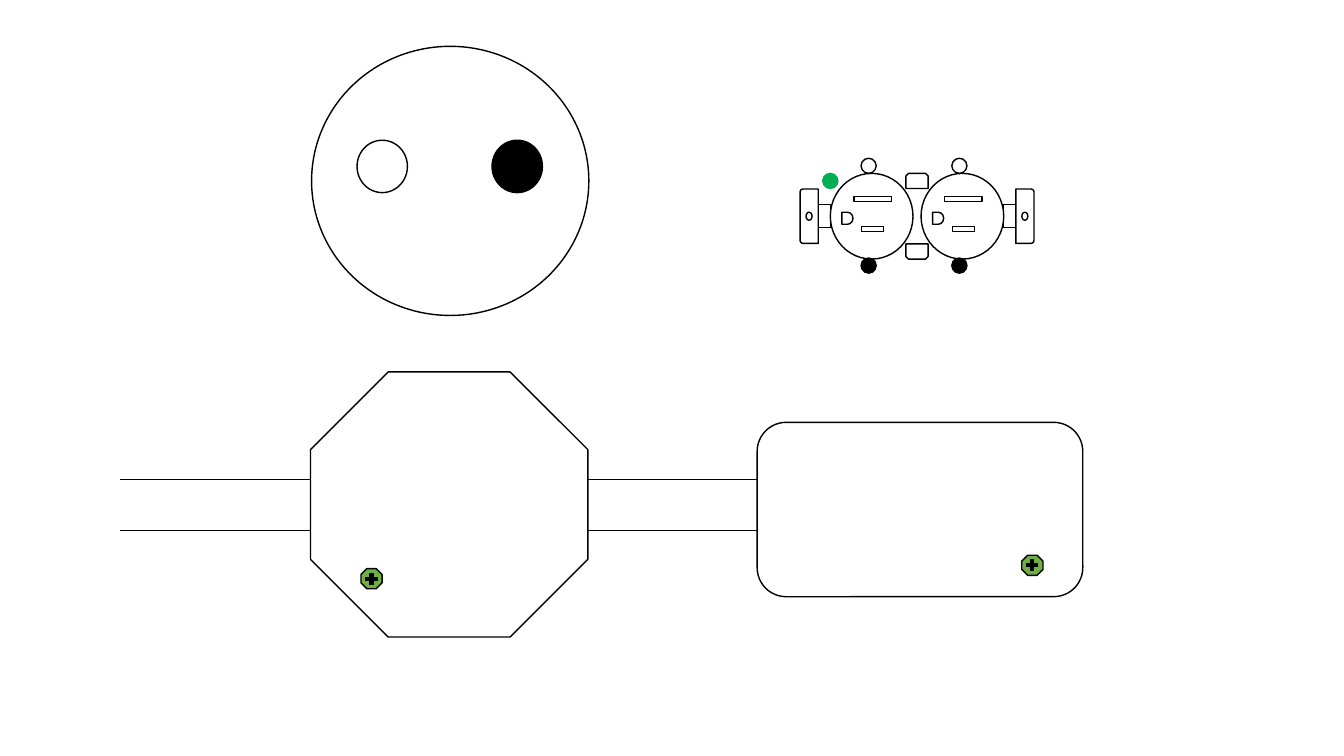
from collections import namedtuple

from lxml.etree import SubElement
from pptx import Presentation
from pptx.dml.color import RGBColor
from pptx.enum.shapes import MSO_CONNECTOR, MSO_SHAPE as Shape
from pptx.oxml.ns import qn
from pptx.util import Inches, Pt

BLACK = RGBColor(0, 0, 0)
WHITE = RGBColor(255, 255, 255)
GROUND_GREEN = RGBColor(0x70, 0xAD, 0x47)
SCREW_GREEN = RGBColor(0x00, 0xB0, 0x50)

Box = namedtuple("Box", "left top width height")


def at_share(box, across, down):
    return box.left + across * box.width, box.top + down * box.height


def draw(group, kind, center, size, fill=None, line=BLACK, turn=0):
    width, height = size
    shape = group.shapes.add_shape(
        kind,
        Inches(center[0] - width / 2),
        Inches(center[1] - height / 2),
        Inches(width),
        Inches(height),
    )
    shape.shadow.inherit = False
    shape.rotation = turn
    if fill is None:
        shape.fill.background()
    else:
        shape.fill.solid()
        shape.fill.fore_color.rgb = fill
    shape.line.color.rgb = line
    shape.line.width = Pt(1)


def draw_line(group, start, end, weight):
    line = group.shapes.add_connector(
        MSO_CONNECTOR.STRAIGHT, *(Inches(value) for value in (*start, *end))
    )
    line.line.color.rgb = BLACK
    line.line.width = Pt(weight)
    SubElement(line._element.spPr, qn("a:effectLst"))


def add_lampholder(page, box):
    group = page.shapes.add_group_shape()
    draw(group, Shape.OVAL, at_share(box, 0.5, 0.5), (box.width, box.height))
    for across, fill in ((0.255, None), (0.742, BLACK)):
        draw(group, Shape.OVAL, at_share(box, across, 0.446), (0.5, 0.52), fill)


def add_ground_screw(group, center):
    x, y = center
    arm = 0.06
    draw(group, Shape.OCTAGON, center, (0.21, 0.2), GROUND_GREEN)
    draw_line(group, (x, y - arm), (x, y + arm), 3)
    draw_line(group, (x - arm, y), (x + arm, y), 3)


def add_wiring_box(page, box, kind, fill, screw, conduit):
    group = page.shapes.add_group_shape()
    draw(group, kind, at_share(box, 0.5, 0.5), (box.width, box.height), fill)
    for y in (conduit.top, conduit.top + conduit.height):
        draw_line(group, (conduit.left, y), (conduit.left + conduit.width, y), 0.5)
    add_ground_screw(group, at_share(box, *screw))


def add_receptacle(group, center):
    x, y = center
    draw(group, Shape.OVAL, center, (0.82, 0.85))
    draw(group, Shape.RECTANGLE, (x + 0.01, y - 0.17), (0.37, 0.05))
    draw(group, Shape.RECTANGLE, (x + 0.01, y + 0.13), (0.22, 0.05))
    draw(group, Shape.FLOWCHART_DELAY, (x - 0.24, y + 0.02), (0.11, 0.12))
    for offset, fill in ((-0.5, None), (0.49, BLACK)):
        draw(group, Shape.OVAL, (x - 0.03, y + offset), (0.15, 0.15), fill)


def add_mounting_ear(group, center, side):
    x, y = center
    draw(group, Shape.ROUND_2_SAME_RECTANGLE, (x + side * 1.07, y), (0.54, 0.18), turn=side * 90 % 360)
    draw(group, Shape.RECTANGLE, (x + side * 0.92, y), (0.12, 0.23))
    draw(group, Shape.OVAL, (x + side * 1.07, y), (0.06, 0.08))


def add_duplex_outlet(page, box):
    group = page.shapes.add_group_shape()
    x, y = center = at_share(box, 0.5, 0.5)
    for side in (-1, 1):
        add_receptacle(group, (x + side * 0.45, y))
        add_mounting_ear(group, center, side)
    for side, turn in ((-1, 0), (1, 180)):
        draw(group, Shape.SNIP_2_SAME_RECTANGLE, (x, y + side * 0.35), (0.22, 0.15), turn=turn)
    draw(group, Shape.OVAL, (x - 0.86, y - 0.35), (0.15, 0.15), SCREW_GREEN, SCREW_GREEN)


def main():
    deck = Presentation()
    deck.slide_width = Inches(13.33)
    deck.slide_height = Inches(7.5)
    page = deck.slides.add_slide(deck.slide_layouts[6])

    add_lampholder(page, Box(3.09, 0.46, 2.75, 2.67))
    add_wiring_box(
        page, Box(3.08, 3.69, 2.75, 2.63), Shape.OCTAGON, WHITE,
        screw=(0.22, 0.78), conduit=Box(1.19, 4.76, 1.89, 0.5),
    )
    add_wiring_box(
        page, Box(7.51, 4.19, 3.23, 1.73), Shape.ROUNDED_RECTANGLE, None,
        screw=(0.845, 0.82), conduit=Box(5.83, 4.76, 1.68, 0.5),
    )
    add_duplex_outlet(page, Box(7.94, 1.57, 2.31, 1.15))
    deck.save("out.pptx")


if __name__ == "__main__":
    main()
